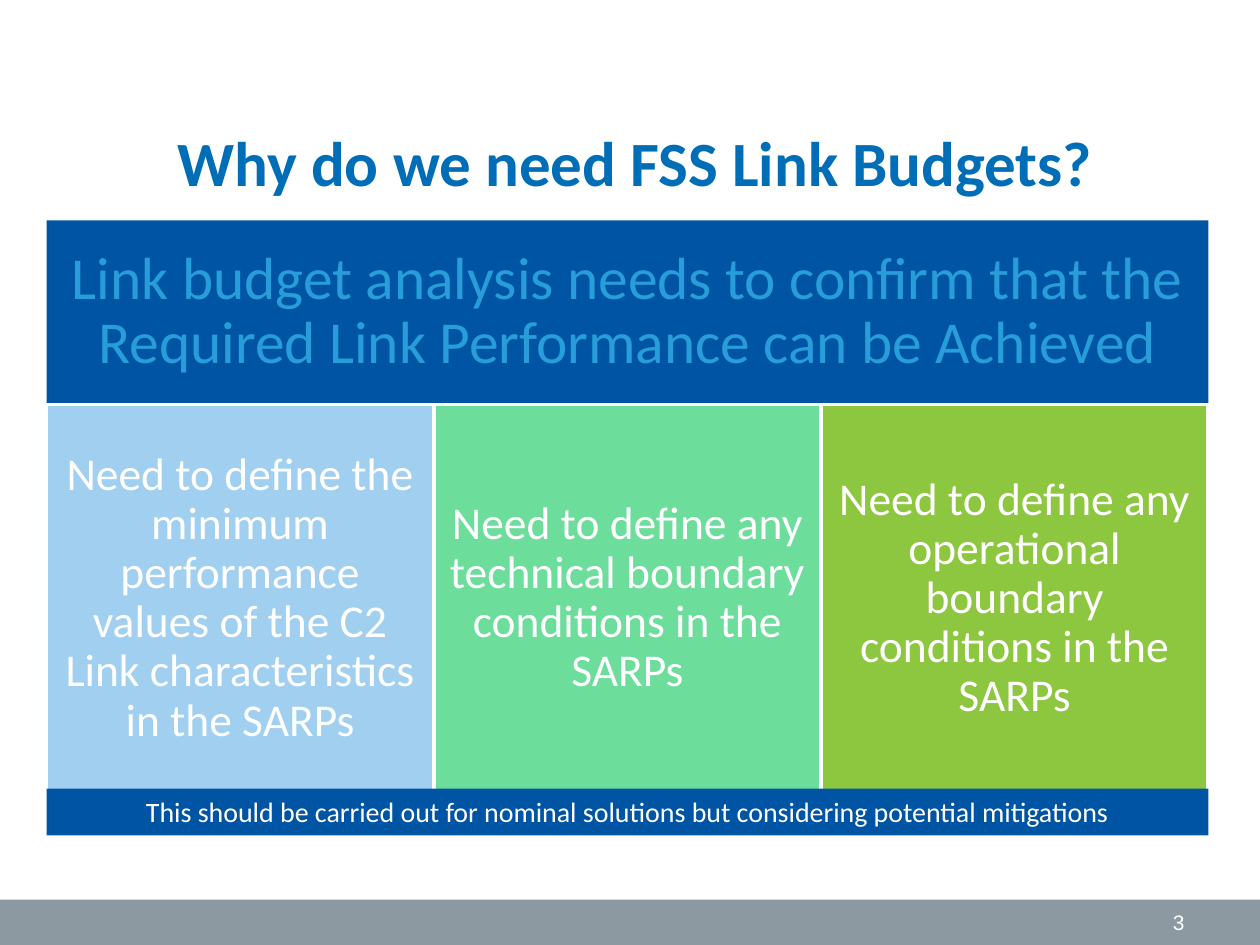
import pptx
import pptx.util
import pptx.dml.color
import pptx.enum.shapes
import pptx.enum.text
from dataclasses import dataclass

Inches = pptx.util.Inches
ALIGN = pptx.enum.text.PP_ALIGN
ANCHOR = pptx.enum.text.MSO_ANCHOR


@dataclass(frozen=True)
class Theme:
    title: str = "006EB7"
    band: str = "0054A4"
    heading: str = "279DD9"
    white: str = "FFFFFF"
    footer: str = "8C99A1"
    columns: tuple = ("A1CFEF", "6DDD9C", "8DC63F")
    font: str = "Calibri"
    number_font: str = "Arial"
    title_size: int = 36
    heading_size: int = 34
    column_size: int = 26
    note_size: int = 16
    number_size: int = 12


THEME = Theme()


def rgb(value):
    return pptx.dml.color.RGBColor.from_string(value)


def write(sp, text, *, size, color=THEME.white, font=THEME.font, bold=False,
          align=ALIGN.CENTER, anchor=ANCHOR.TOP, inset=None, spacing=None):
    tf = sp.text_frame
    tf.word_wrap = True
    tf.vertical_anchor = anchor
    if inset is not None:
        tf.margin_left = tf.margin_right = Inches(inset)
        tf.margin_top = tf.margin_bottom = Inches(inset)
    p = tf.paragraphs[0]
    p.alignment = align
    if spacing is not None:
        p.line_spacing = spacing
    r = p.add_run()
    r.text = text
    r.font.size = pptx.util.Pt(size)
    r.font.name = font
    r.font.bold = bold
    r.font.color.rgb = rgb(color)


def add_rect(s, box, fill, line=None):
    sp = s.shapes.add_shape(pptx.enum.shapes.MSO_SHAPE.RECTANGLE, *map(Inches, box))
    sp.shadow.inherit = False
    sp.fill.solid()
    sp.fill.fore_color.rgb = rgb(fill)
    if line:
        sp.line.color.rgb = rgb(line)
        sp.line.width = pptx.util.Pt(2)
    else:
        sp.line.fill.background()
    return sp


def add_footer(s, box, number):
    left, top, width, height = box
    add_rect(s, box, THEME.footer)
    number_width, margin = 2.33, 0.5
    number_box = (left + width - margin - number_width, top, number_width, height)
    sp = s.shapes.add_textbox(*map(Inches, number_box))
    write(sp, number, size=THEME.number_size, font=THEME.number_font,
          align=ALIGN.RIGHT, anchor=ANCHOR.MIDDLE)


def add_title(s, box, text):
    sp = s.shapes.add_textbox(*map(Inches, box))
    write(sp, text, size=THEME.title_size, color=THEME.title, bold=True)


def add_heading(s, box, text):
    sp = add_rect(s, box, THEME.band)
    write(sp, text, size=THEME.heading_size, color=THEME.heading,
          anchor=ANCHOR.MIDDLE, inset=0.14, spacing=0.9)


def add_columns(s, box, texts):
    left, top, width, height = box
    step = width / len(texts)
    for i, (text, fill) in enumerate(zip(texts, THEME.columns)):
        sp = add_rect(s, (left + i * step, top, step, height), fill, THEME.white)
        write(sp, text, size=THEME.column_size, anchor=ANCHOR.MIDDLE,
              inset=0.11, spacing=0.9)


def add_note(s, box, text):
    sp = add_rect(s, box, THEME.band)
    write(sp, text, size=THEME.note_size)


def main():
    prs = pptx.Presentation()
    prs.slide_width, prs.slide_height = Inches(10), Inches(7.5)
    s = prs.slides.add_slide(prs.slide_layouts[6])
    left, width = 0.37, 9.22
    add_footer(s, (0, 7.14, 10, 0.36), "3")
    add_title(s, (0.5, 0.93, 9.08, 0.6), "Why do we need FSS Link Budgets?")
    add_heading(s, (left, 1.75, width, 1.46),
                "Link budget analysis needs to confirm that the "
                "Required Link Performance can be Achieved")
    add_columns(s, (left, 3.21, width, 3.08), (
        "Need to define the minimum performance values of the C2 Link "
        "characteristics in the SARPs",
        "Need to define any technical boundary conditions in the SARPs",
        "Need to define any operational boundary conditions in the SARPs",
    ))
    add_note(s, (left, 6.26, width, 0.37),
             "This should be carried out for nominal solutions "
             "but considering potential mitigations")
    prs.save("out.pptx")


if __name__ == "__main__":
    main()
